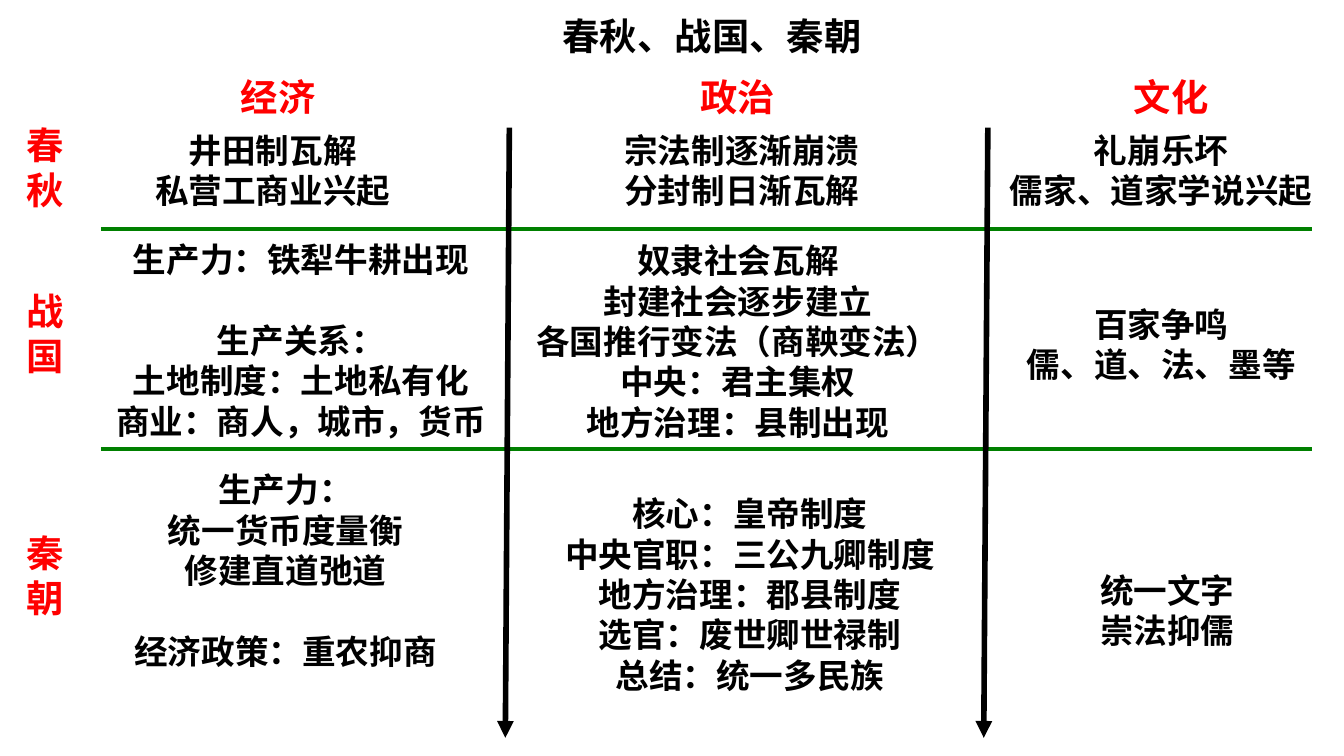
from dataclasses import dataclass

from lxml.etree import SubElement
from pptx import Presentation
from pptx.dml.color import RGBColor
from pptx.enum.shapes import MSO_CONNECTOR
from pptx.enum.text import PP_ALIGN
from pptx.oxml.ns import qn
from pptx.util import Inches, Pt


@dataclass(frozen=True)
class Theme:
    """Colours, fonts and sizes of the slide."""
    ink: RGBColor = RGBColor(0, 0, 0)
    accent: RGBColor = RGBColor(0xFF, 0, 0)
    rule: RGBColor = RGBColor(0, 0x80, 0)
    heading_font: str = "Noto Sans CJK SC"
    body_font: str = "Calibri"
    heading_size: int = 20
    body_size: int = 18
    leading: float = 1.21
    rule_width: int = 2
    arrow_width: int = 3


@dataclass(frozen=True)
class Box:
    """A region of the slide, addressed by percent of its width and height."""
    left: int
    top: int
    width: int
    height: int

    def x(self, percent):
        """Horizontal position at a percent of the width."""
        return round(self.left + self.width * percent / 100)

    def y(self, percent):
        """Vertical position at a percent of the height."""
        return round(self.top + self.height * percent / 100)


THEME = Theme()
TITLE = "春秋、战国、秦朝"
ASPECTS = [("经济", 20.7), ("政治", 54.9), ("文化", 87.15)]
PERIODS = [("春秋", 15.3), ("战国", 37.3), ("秦朝", 69.3)]
RULES = (30.25, 59.4)
ARROWS = (37.9, 73.5)
GAP = ""
NOTES = [
    (20.3, 16.3, ["井田制瓦解", "私营工商业兴起"]),
    (55.2, 16.3, ["宗法制逐渐崩溃", "分封制日渐瓦解"]),
    (86.4, 16.3, ["礼崩乐坏", "儒家、道家学说兴起"]),
    (22.4, 30.75, ["生产力：铁犁牛耕出现", GAP, "生产关系：",
                   "土地制度：土地私有化", "商业：商人，城市，货币"]),
    (54.9, 30.9, ["奴隶社会瓦解", "封建社会逐步建立", "各国推行变法（商鞅变法）",
                  "中央：君主集权", "地方治理：县制出现"]),
    (86.4, 39.3, ["百家争鸣", "儒、道、法、墨等"]),
    (21.25, 61.2, ["生产力：", "统一货币度量衡", "修建直道弛道", GAP,
                   "经济政策：重农抑商"]),
    (55.8, 64.4, ["核心：皇帝制度", "中央官职：三公九卿制度", "地方治理：郡县制度",
                  "选官：废世卿世禄制", "总结：统一多民族"]),
    (86.85, 74.5, ["统一文字", "崇法抑儒"]),
]


def add_text(slide, centre, top, lines, font, size, color, stacked=False):
    """Place bold centred lines in a box fitted to their length."""
    columns = 1 if stacked else max(map(len, lines))
    rows = len(lines[0]) if stacked else len(lines)
    width = Pt(size * columns) + Inches(0.21)
    height = Pt(size * THEME.leading * rows) + Inches(0.1)
    frame = slide.shapes.add_textbox(
        centre - width // 2, top, width, height).text_frame
    frame.word_wrap = stacked
    frame.text = "\n".join(line for line in lines if line)
    gaps = [before == GAP for before, line in zip(["-"] + lines, lines) if line]
    for paragraph, after_gap in zip(frame.paragraphs, gaps):
        paragraph.alignment = PP_ALIGN.CENTER
        if after_gap:
            paragraph.space_before = Pt(size * THEME.leading)
        style = paragraph.runs[0].font
        style.name, style.size, style.bold = font, Pt(size), True
        style.color.rgb = color


def add_heading(slide, centre, top, words, color, stacked=False):
    """Place one heading, upright or stacked."""
    add_text(slide, centre, top, [words], THEME.heading_font,
             THEME.heading_size, color, stacked)


def add_line(slide, start, end, color, width, arrow=False):
    """Draw a flat line, with an arrowhead at its end if asked."""
    line = slide.shapes.add_connector(MSO_CONNECTOR.STRAIGHT, *start, *end)
    line.line.color.rgb = color
    line.line.width = Pt(width)
    properties = line._element.spPr
    if arrow:
        SubElement(properties.find(qn("a:ln")), qn("a:tailEnd"), type="triangle")
    SubElement(properties, qn("a:effectLst"))


def add_headings(slide, box):
    """Place the title, the aspects across and the periods down."""
    add_heading(slide, box.x(53), box.y(0.9), TITLE, THEME.ink)
    for aspect, centre in ASPECTS:
        add_heading(slide, box.x(centre), box.y(8.9), aspect, THEME.accent)
    for period, top in PERIODS:
        add_heading(slide, box.x(3.35), box.y(top), period, THEME.accent, True)


def add_grid(slide, box):
    """Draw the rules between periods and the arrows between aspects."""
    for height in RULES:
        add_line(slide, (box.x(7.5), box.y(height)), (box.x(97.6), box.y(height)),
                 THEME.rule, THEME.rule_width)
    for across in ARROWS:
        add_line(slide, (box.x(across), box.y(16.9)),
                 (box.x(across - 0.3), box.y(97.6)),
                 THEME.ink, THEME.arrow_width, arrow=True)


def add_notes(slide, box):
    """Place the notes of every period and aspect."""
    for centre, top, lines in NOTES:
        add_text(slide, box.x(centre), box.y(top), lines,
                 THEME.body_font, THEME.body_size, THEME.ink)


def main():
    """Build and save the slide."""
    deck = Presentation()
    deck.slide_width = Inches(10)
    deck.slide_height = deck.slide_width * 9 // 16
    slide = deck.slides.add_slide(deck.slide_layouts[6])
    page = Box(0, 0, deck.slide_width, deck.slide_height)
    for add_region in (add_headings, add_grid, add_notes):
        add_region(slide, page)
    deck.save("out.pptx")


if __name__ == "__main__":
    main()
